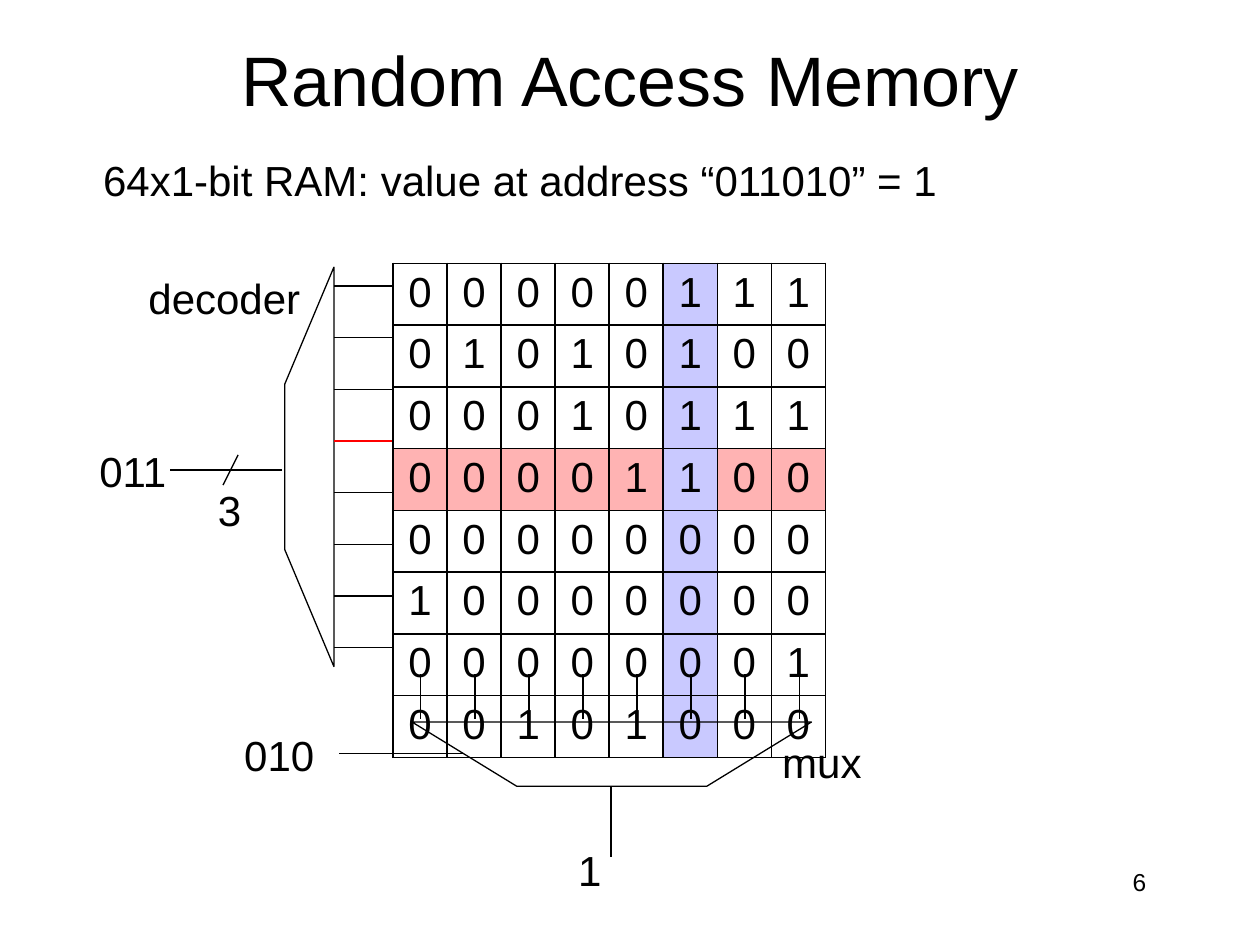
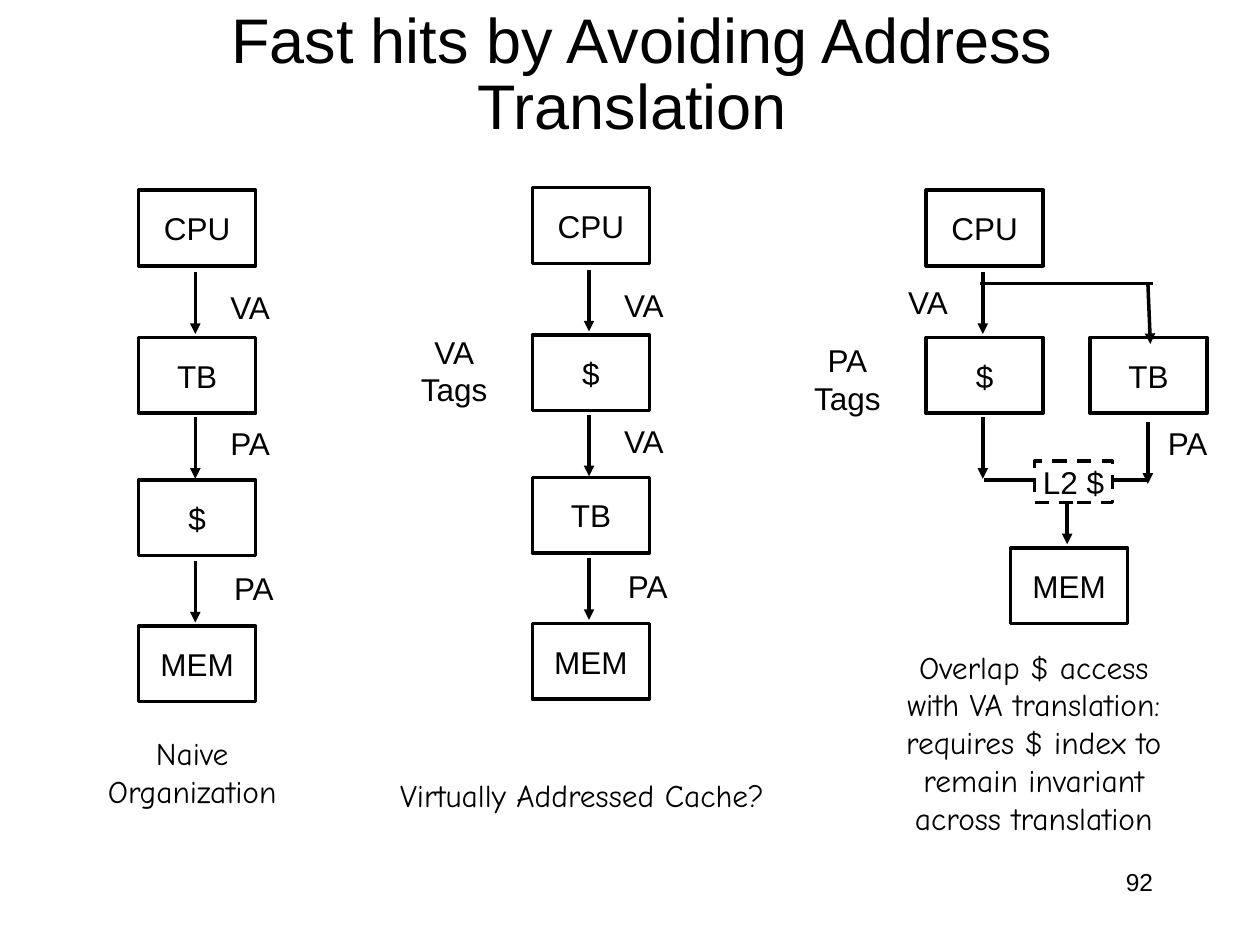
from pptx import Presentation
from pptx.dml.color import RGBColor
from pptx.enum.dml import MSO_LINE_DASH_STYLE as Dash
from pptx.enum.shapes import MSO_CONNECTOR as Link, MSO_SHAPE as Form
from pptx.enum.text import MSO_ANCHOR as Anchor, MSO_AUTO_SIZE as Fit, PP_ALIGN as Align
from pptx.oxml.ns import qn
from pptx.util import Inches, Pt
from lxml.etree import SubElement as Sub

BLACK = RGBColor(0, 0, 0)
WHITE = RGBColor(255, 255, 255)
RED = RGBColor(255, 0, 0)
PINK = RGBColor(0xFF, 0xB3, 0xB3)
LILAC = RGBColor(0xC9, 0xC9, 0xFF)
SANS, COMIC = "Arial", "Comic Neue"
COLS = 100  # grid columns across the slide; rows have the same pitch

BITS = ["00000111", "01010100", "00010111", "00001100",
        "00000000", "10000000", "00000001", "00101000"]
ROW, COL = 3, 5  # the selected row and column of the memory


class Deck:
    def __init__(self):
        self.prs = Presentation()
        self.prs.slide_width, self.prs.slide_height = Inches(10), Inches(7.5)
        self.slide = None

    def grid(self, *cells):
        """Turn grid columns or rows into slide lengths."""
        return [round(cell * self.prs.slide_width / COLS) for cell in cells]

    def run(self, para, text, size, font=SANS):
        run = para.add_run()
        run.text = text
        run.font.size, run.font.name = Pt(size), font
        run.font.color.rgb = BLACK

    def fill_text(self, frame, lines, size, align, font=SANS):
        for i, line in enumerate(lines):
            para = frame.add_paragraph() if i else frame.paragraphs[0]
            para.alignment = align
            self.run(para, line, size, font)

    def page(self, box, runs, number, space=1.0):
        """Start a slide with its title, given as (text, size) runs, and its number."""
        self.slide = self.prs.slides.add_slide(self.prs.slide_layouts[5])
        title = self.slide.shapes.title
        title.left, title.top, title.width, title.height = self.grid(*box)
        frame = title.text_frame
        frame.auto_size, frame.vertical_anchor = Fit.NONE, Anchor.MIDDLE
        para = frame.paragraphs[0]
        para.alignment, para.line_spacing = Align.CENTER, space
        for text, size in runs:
            self.run(para, text, size)
        self.text((71.7, 68.3, 20.8, 5), [number], 14, Align.RIGHT, wrap=True)

    def text(self, box, lines, size=18, align=Align.LEFT, font=SANS, wrap=False):
        frame = self.slide.shapes.add_textbox(*self.grid(*box)).text_frame
        frame.word_wrap = wrap
        self.fill_text(frame, lines, size, align, font)

    def shape(self, form, box, width):
        shape = self.slide.shapes.add_shape(form, *self.grid(*box))
        shape.shadow.inherit = False
        shape.fill.background()
        shape.line.color.rgb, shape.line.width = BLACK, Pt(width)
        return shape

    def block(self, box, name, dash=False):
        shape = self.shape(Form.RECTANGLE, box, 2)
        shape.fill.solid()
        shape.fill.fore_color.rgb = WHITE
        if dash:
            shape.line.dash_style = Dash.DASH
        frame = shape.text_frame
        frame.word_wrap, frame.vertical_anchor = False, Anchor.MIDDLE
        self.fill_text(frame, [name], 18, Align.CENTER)

    def funnel(self, box, slant, turn):
        shape = self.shape(Form.TRAPEZOID, box, 0.75)
        shape.adjustments[0], shape.rotation = slant, turn

    def line(self, ends, width=0.75, color=BLACK, arrow=False):
        link = self.slide.shapes.add_connector(Link.STRAIGHT, *self.grid(*ends))
        link.line.color.rgb, link.line.width = color, Pt(width)
        props = link._element.spPr
        if arrow:
            Sub(props.find(qn("a:ln")), qn("a:tailEnd"), type="triangle")
        Sub(props, qn("a:effectLst"))

    def edge(self, cell):
        """Draw a thin black border round a table cell."""
        props = cell._tc.get_or_add_tcPr()
        for side in ("lnL", "lnR", "lnT", "lnB"):
            line = Sub(props, qn("a:" + side), w=str(Pt(1)))
            Sub(Sub(line, qn("a:solidFill")), qn("a:srgbClr"), val=str(BLACK))

    def table(self, box, rows, shade):
        """Add a table; shade(row, column) gives a cell's colour or None."""
        table = self.slide.shapes.add_table(
            len(rows), len(rows[0]), *self.grid(*box)).table
        table.first_row = table.horz_banding = False
        for r, row in enumerate(rows):
            for c, value in enumerate(row):
                cell = table.cell(r, c)
                cell.margin_top, cell.margin_bottom = self.grid(0.45, 0.45)
                self.fill_text(cell.text_frame, [value], 24, Align.CENTER)
                self.edge(cell)
                color = shade(r, c)
                if color is None:
                    cell.fill.background()
                else:
                    cell.fill.solid()
                    cell.fill.fore_color.rgb = color

    def stack(self, x, y, names, marks):
        """Draw blocks downwards, with an arrow and a label under each mark."""
        for name, top in zip(names, (0, 11.7, 23, 34.6)):
            self.block((x, y + top, 9.3, 6), name)
        spots = ((6.5, 6.3, 7.3), (18, 6.3, 18.1), (29.4, 6.6, 29.6))
        for mark, (top, dx, dy) in zip(marks, spots):
            self.arrow(x + 4.5, y + top)
            if mark:
                self.text((x + dx, y + dy, 5.3, 4), [mark])

    def arrow(self, x, y, dx=0):
        self.line((x, y, x + dx, y + 4.9), 2, arrow=True)


def shade(row, col):
    if col == COL:
        return LILAC
    return PINK if row == ROW else None


def memory(deck):
    deck.page((0, 0, 100, 12.5), [("Random Access Memory", 40)], "6 ")
    deck.table((31.2, 20.9, 34.3, 32.4), BITS, shade)
    deck.funnel((8.7, 35.1, 31.7, 3.9), 2.38, 270)
    deck.funnel((32.7, 57.3, 31.7, 5.1), 1.63, 180)
    for i in range(len(BITS)):
        y, x = 22.7 + 4.1 * i, 33.4 + 4.29 * i
        deck.line((31.1, y, 26.5, y), color=RED if i == ROW else BLACK)
        deck.line((x, 53.5, x, 57.1))
    for ends in ((22.4, 37.3, 13.5, 37.3), (18.9, 36.1, 17.7, 38.5),
                 (36.8, 59.8, 26.9, 59.8), (48.5, 62.4, 48.5, 68)):
        deck.line(ends)
    for x, y, width, text in (
            (7.2, 11.8, 68.9, "64x1-bit RAM: value at address “011010” = 1"),
            (10.8, 21.1, 14.2, "decoder"), (6.9, 34.9, 7.4, "011"),
            (16.3, 38, 3.9, "3"), (18.4, 57.4, 7.6, "010"),
            (61.1, 58, 8.4, "mux"), (44.9, 66.5, 3.9, "1")):
        deck.text((x, y, width, 5), [text], 24)


def cache(deck):
    deck.page((9.7, 0, 82.5, 12.5),
              [("Fast hits by Avoiding Address Translation", 36), (" ", 40)],
              "92", 0.8)
    left, pitch, top = 11, 31.25, 15.1
    deck.stack(left, top, ["CPU", "TB", "$", "MEM"], ["VA", "PA", "PA"])
    deck.stack(left + pitch, top - 0.2, ["CPU", "$", "TB", "MEM"], ["VA", "VA", "PA"])
    deck.stack(left + 2 * pitch, top, ["CPU", "$"], ["", ""])

    deck.block((86.5, 26.8, 9.3, 6), "TB")
    deck.block((80.2, 43.5, 9.3, 6), "MEM")
    deck.line((91.5, 22.5, 77.8, 22.5), 2)
    deck.line((78.1, 38.1, 91.2, 38.1), 2)
    deck.arrow(91.1, 21.6 + 0.8, 0.2)
    deck.arrow(91.1, 33.5)
    deck.arrow(84.7, 38.3)
    deck.block((82.1, 36.6, 6.2, 3.3), "L2 $", dash=True)
    deck.text((71.1, 22, 5.3, 4), ["VA"])
    deck.text((91.7, 33.2, 5.3, 4), ["PA"])

    for x, y, tag in ((32.3, 25.9, "VA"), (63.5, 26.6, "PA")):
        deck.text((x, y, 7.5, 7), [tag, "Tags"], align=Align.CENTER)
    for box, lines in (
            ((6.8, 57.8, 16.9, 8), ["Naive", "Organization"]),
            ((29.1, 61.1, 34.2, 4.5), ["Virtually Addressed Cache?"]),
            ((69.4, 50.9, 25.3, 18.4),
             ["Overlap $ access", "with VA translation:", "requires $ index to",
              "remain invariant", "across translation"])):
        deck.text(box, lines, align=Align.CENTER, font=COMIC)


def main():
    deck = Deck()
    memory(deck)
    cache(deck)
    deck.prs.save("out.pptx")


if __name__ == "__main__":
    main()
